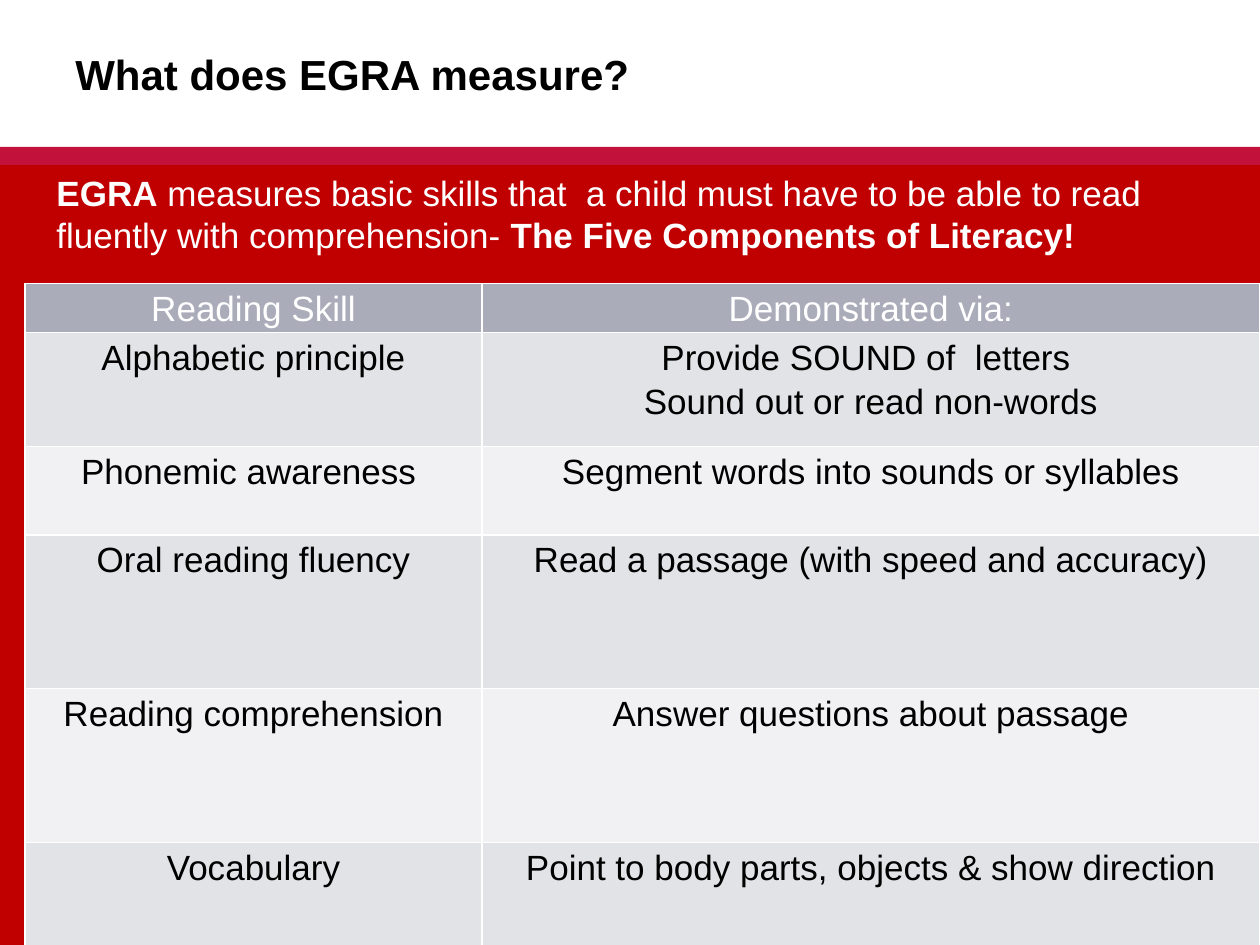
from dataclasses import dataclass

import pptx
import pptx.dml.color
import pptx.enum.shapes
import pptx.enum.text
import pptx.oxml
import pptx.oxml.ns
import pptx.util

Pt = pptx.util.Pt
FONT = "Arial"
COLORS = {
    "crimson": "C2113A",
    "red": "C00000",
    "header": "AAACBA",
    "odd_row": "E2E3E7",
    "even_row": "F1F1F3",
    "white": "FFFFFF",
    "black": "000000",
}


@dataclass(frozen=True)
class Box:
    left: float
    top: float
    width: float
    height: float

    def lengths(self) -> tuple:
        return Pt(self.left), Pt(self.top), Pt(self.width), Pt(self.height)


@dataclass(frozen=True)
class Run:
    text: str
    bold: bool


@dataclass(frozen=True)
class SkillRow:
    skill: str
    tasks: tuple[str, ...]
    height: float
    space_after: float = 0


COLUMN_WIDTHS = (261, 444.6)
SKILL_ROWS = (
    SkillRow("Reading Skill", ("Demonstrated via:",), 28, 10),
    SkillRow("Alphabetic principle",
             ("Provide SOUND of  letters ", "Sound out or read non-words"), 65.2, 10),
    SkillRow("Phonemic awareness ", ("Segment words into sounds or syllables",), 50.4, 10),
    SkillRow("Oral reading fluency", ("Read a passage (with speed and accuracy)",), 88),
    SkillRow("Reading comprehension", ("Answer questions about passage",), 88),
    SkillRow("Vocabulary", ("Point to body parts, objects & show direction",), 66.2),
)


def rgb(color: str) -> pptx.dml.color.RGBColor:
    return pptx.dml.color.RGBColor.from_string(COLORS[color])


def style_font(paragraph, size: float, color: str) -> None:
    paragraph.font.name = FONT
    paragraph.font.size = Pt(size)
    paragraph.font.color.rgb = rgb(color)


def add_band(slide, box: Box, color: str) -> None:
    band = slide.shapes.add_shape(
        pptx.enum.shapes.MSO_SHAPE.RECTANGLE, *box.lengths())
    band.shadow.inherit = False
    band.fill.solid()
    band.fill.fore_color.rgb = rgb(color)
    band.line.fill.background()


def add_text(slide, box: Box, runs: tuple[Run, ...], size: float, color: str) -> None:
    frame = slide.shapes.add_textbox(*box.lengths()).text_frame
    frame.word_wrap = True
    paragraph = frame.paragraphs[0]
    style_font(paragraph, size, color)
    for part in runs:
        run = paragraph.add_run()
        run.text = part.text
        run.font.bold = part.bold


def add_borders(cell, color: str, width: float) -> None:
    properties = cell._tc.get_or_add_tcPr()
    for side in ("lnL", "lnR", "lnT", "lnB"):
        properties.append(pptx.oxml.parse_xml(
            f'<a:{side} {pptx.oxml.ns.nsdecls("a")} w="{Pt(width)}">'
            f'<a:solidFill><a:srgbClr val="{COLORS[color]}"/></a:solidFill></a:{side}>'))


def fill_cell(cell, lines: tuple[str, ...], space_after: float,
              fill: str, text_color: str) -> None:
    add_borders(cell, "white", 1)
    cell.fill.solid()
    cell.fill.fore_color.rgb = rgb(fill)
    cell.margin_left = cell.margin_right = Pt(0.7)
    cell.margin_top = cell.margin_bottom = 0
    cell.text = "\n".join(lines)
    for paragraph in cell.text_frame.paragraphs:
        style_font(paragraph, 20, text_color)
        paragraph.alignment = pptx.enum.text.PP_ALIGN.CENTER
        paragraph.line_spacing = 1.15
    if space_after:
        paragraph.space_after = Pt(space_after)


def add_skills_table(slide, left: float, top: float, rows: tuple[SkillRow, ...]) -> None:
    box = Box(left, top, sum(COLUMN_WIDTHS), sum(row.height for row in rows))
    table = slide.shapes.add_table(
        len(rows), len(COLUMN_WIDTHS), *box.lengths()).table
    for column, width in zip(table.columns, COLUMN_WIDTHS):
        column.width = Pt(width)
    for index, row in enumerate(rows):
        table.rows[index].height = Pt(row.height)
        if index == 0:
            fill, text_color = "header", "white"
        else:
            fill, text_color = ("odd_row" if index % 2 else "even_row"), "black"
        for column, lines in enumerate(((row.skill,), row.tasks)):
            fill_cell(table.cell(index, column), lines, row.space_after, fill, text_color)


def main() -> None:
    presentation = pptx.Presentation()
    presentation.slide_width, presentation.slide_height = Pt(720), Pt(540)
    slide = presentation.slides.add_slide(presentation.slide_layouts[6])

    add_band(slide, Box(0, 84, 720, 12), "crimson")
    add_band(slide, Box(0, 94.3, 720, 445.7), "red")
    add_text(slide, Box(36, 24, 642, 48),
             (Run("What does EGRA measure?", True),), 24, "black")
    add_skills_table(slide, 14.4, 162, SKILL_ROWS)
    add_text(slide, Box(25.2, 94.3, 674.6, 55.4), (
        Run("EGRA", True),
        Run(" measures basic skills that  a child must have to be able to read "
            "fluently with comprehension- ", False),
        Run("The Five Components of Literacy!", True),
    ), 20, "white")

    presentation.save("out.pptx")


if __name__ == "__main__":
    main()
